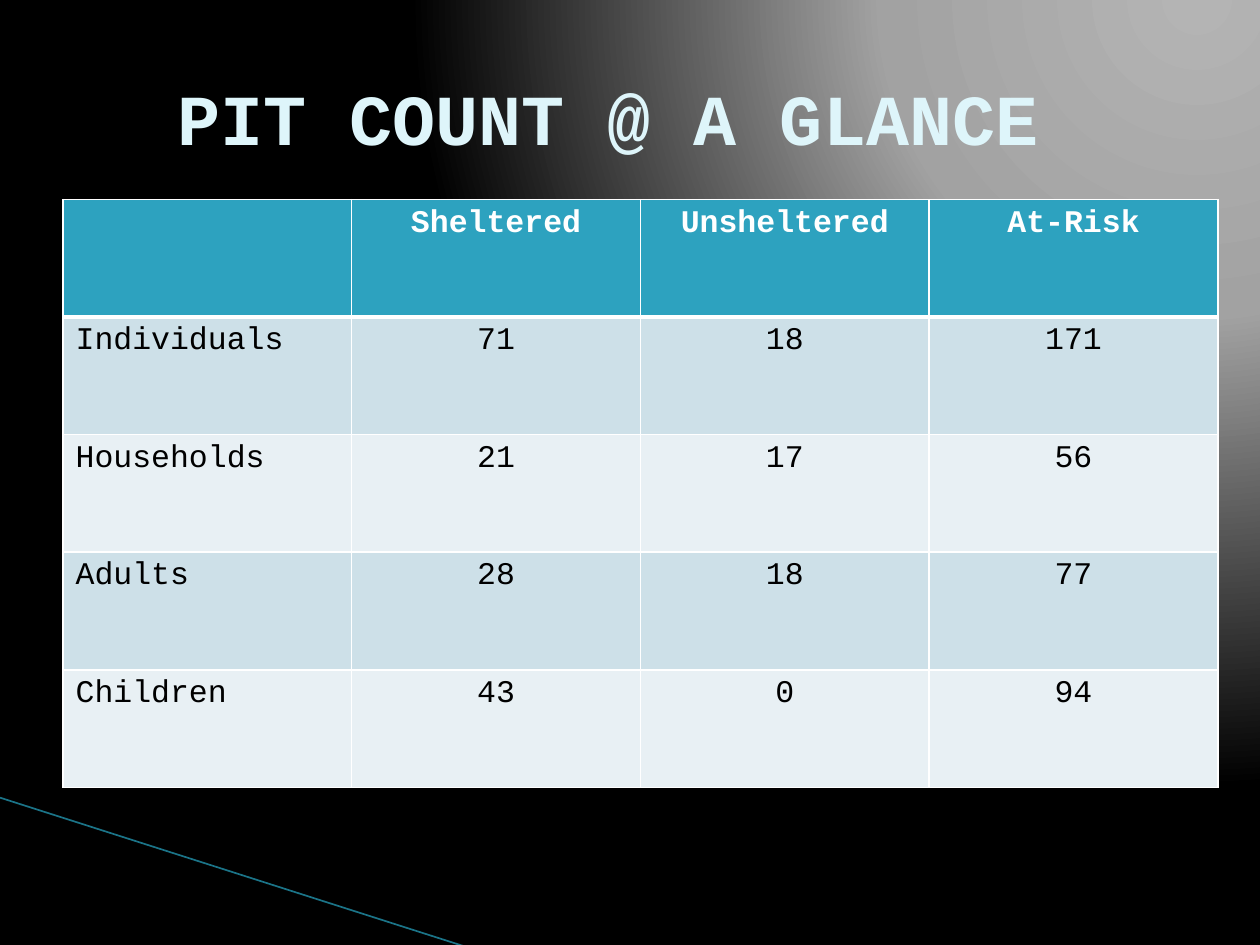
from lxml import etree
from pptx import Presentation
from pptx import util as u
from pptx.dml import color
from pptx.enum import shapes, text
from pptx.oxml import ns, parse_xml

TITLE = "PIT COUNT @ A GLANCE "
ROWS = [
    ("", "Sheltered", "Unsheltered", "At-Risk"),
    ("Individuals", "71", "18", "171"),
    ("Households", "21", "17", "56"),
    ("Adults", "28", "18", "77"),
    ("Children", "43", "0", "94"),
]
FONT = "Courier New"
HEADER_FILL, BAND_FILLS = "2DA2BF", ("E8F0F4", "CDE0E8")
GLOW_STOPS = [(0, "B4B4B4"), (40, "A2A2A2"), (100, "000000")]
GLOW_CENTRE = {"l": 95, "t": -106, "r": 5, "b": 206}
WEDGES = [
    ((56.4, 393.8, 299.4, 113.6),
     [(39.3, 468.6), (428.4, 540.8), (328.2, 540.8), (39.3, 468.2)], "A0CBDC", 40),
    ((-4.2, 455.5, 299.4, 66),
     [(38.3, 467.6), (328.9, 540.8), (267.8, 541.1), (38.9, 468.1)], "000000", 100),
]
TABLE_LEFT, TABLE_TOP, COLUMN_WIDTH, ROW_HEIGHT = 36, 114, 165, 67.2


def rgb(value):
    return color.RGBColor.from_string(value)


def add_child(parent, tag, **attributes):
    child = etree.SubElement(parent, ns.qn(tag))
    for name, value in attributes.items():
        child.set(name, str(value))
    return child


def place(shape, frame):
    shape.left, shape.top, shape.width, shape.height = map(u.Pt, frame)


def style(para, size, colour, bold, align):
    para.alignment = align
    for span in para.runs:
        span.font.name = FONT
        span.font.size = u.Pt(size)
        span.font.bold = bold
        span.font.color.rgb = rgb(colour)


def paint_background(page):
    page.background.fill.solid()
    solid = next(page.background._cSld.iter(ns.qn("a:solidFill")))
    glow = parse_xml(f'<a:gradFill {ns.nsdecls("a")} rotWithShape="1"/>')
    stops = add_child(glow, "a:gsLst")
    for position, colour in GLOW_STOPS:
        stop = add_child(stops, "a:gs", pos=position * 1000)
        add_child(stop, "a:srgbClr", val=colour)
    circle = add_child(glow, "a:path", path="circle")
    centre = {side: value * 1000 for side, value in GLOW_CENTRE.items()}
    add_child(circle, "a:fillToRect", **centre)
    solid.getparent().replace(solid, glow)


def reframe(wedge, frame):
    old_left, old_top = wedge.left, wedge.top
    place(wedge, frame)
    outline = next(wedge._element.spPr.iter(ns.qn("a:path")))
    outline.set("w", str(wedge.width))
    outline.set("h", str(wedge.height))
    for point in outline.iter(ns.qn("a:pt")):
        point.set("x", str(int(point.get("x")) + old_left - wedge.left))
        point.set("y", str(int(point.get("y")) + old_top - wedge.top))


def add_wedge(page, frame, points, colour, opacity):
    builder = page.shapes.build_freeform(*points[0], scale=u.Pt(1))
    builder.add_line_segments(points[1:], close=True)
    wedge = builder.convert_to_shape()
    reframe(wedge, frame)
    wedge.shadow.inherit = False
    wedge.line.fill.background()
    wedge.fill.solid()
    wedge.fill.fore_color.rgb = rgb(colour)
    if opacity < 100:
        tint = next(wedge._element.spPr.iter(ns.qn("a:srgbClr")))
        add_child(tint, "a:alpha", val=opacity * 1000)


def add_accent_line(page):
    ends = [u.Pt(value) for value in (-0.7, 455.6, 267, 541.3)]
    line = page.shapes.add_connector(shapes.MSO_CONNECTOR.STRAIGHT, *ends)
    line.line.width = u.Pt(0.95)
    line.line.color.rgb = rgb("1B7488")
    add_child(line._element.spPr, "a:effectLst")


def set_borders(cell, row):
    widths = {"a:lnL": 1, "a:lnR": 1, "a:lnT": 3 if row == 1 else 1, "a:lnB": 3 if row == 0 else 1}
    properties = cell._tc.get_or_add_tcPr()
    for index, (tag, width) in enumerate(widths.items()):
        border = add_child(properties, tag, w=u.Pt(width))
        add_child(add_child(border, "a:solidFill"), "a:srgbClr", val="FFFFFF")
        properties.insert(index, border)


def add_count_table(page):
    columns = len(ROWS[0])
    frame = page.shapes.add_table(
        len(ROWS), columns, u.Pt(TABLE_LEFT), u.Pt(TABLE_TOP),
        u.Pt(COLUMN_WIDTH * columns), u.Pt(ROW_HEIGHT * len(ROWS)))
    for row, values in enumerate(ROWS):
        header = row == 0
        for column, value in enumerate(values):
            cell = frame.table.cell(row, column)
            cell.text_frame.text = value
            cell.fill.solid()
            cell.fill.fore_color.rgb = rgb(HEADER_FILL if header else BAND_FILLS[row % 2])
            set_borders(cell, row)
            align = text.PP_ALIGN.CENTER if column else text.PP_ALIGN.LEFT
            style(cell.text_frame.paragraphs[0], 18, "FFFFFF" if header else "000000", header, align)


def add_title(page):
    title = page.shapes.title
    place(title, (36, 21.6, 648, 90))
    title.text_frame.text = TITLE
    title.text_frame.vertical_anchor = text.MSO_ANCHOR.MIDDLE
    style(title.text_frame.paragraphs[0], 41, "DEF5FA", True, text.PP_ALIGN.CENTER)
    page.shapes._spTree.append(title._element)


def main():
    deck = Presentation()
    deck.slide_width, deck.slide_height = u.Pt(720), u.Pt(540)
    page = deck.slides.add_slide(deck.slide_layouts[5])
    paint_background(page)
    for wedge in WEDGES:
        add_wedge(page, *wedge)
    add_accent_line(page)
    add_count_table(page)
    add_title(page)
    deck.save("out.pptx")


if __name__ == "__main__":
    main()
